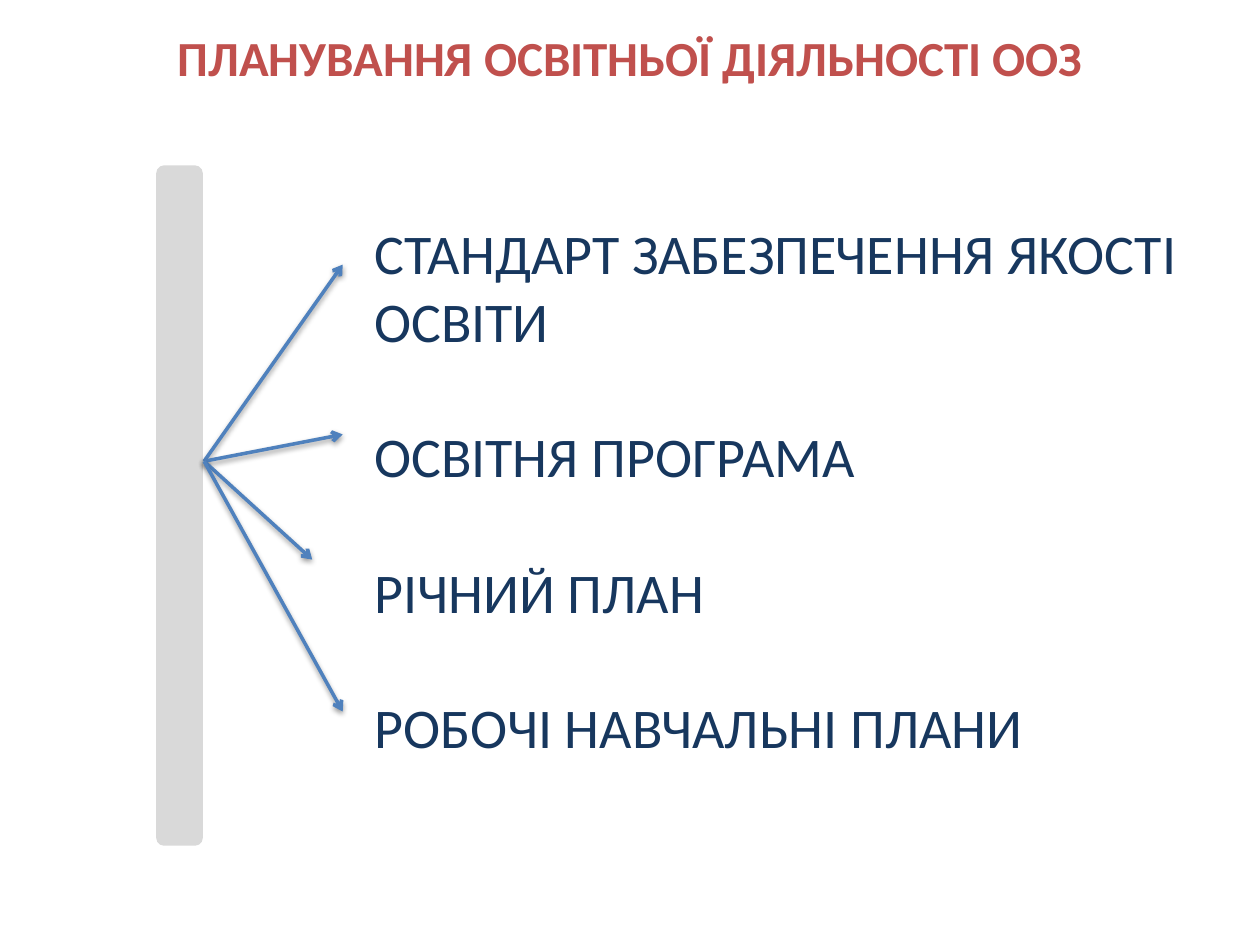
from dataclasses import dataclass

from lxml.etree import SubElement
from pptx import Presentation
from pptx.dml.color import RGBColor as RGB
from pptx.enum.shapes import MSO_CONNECTOR as Line, MSO_SHAPE as Shape
from pptx.enum.text import MSO_ANCHOR as Anchor, MSO_AUTO_SIZE as Fit, PP_ALIGN as Align
from pptx.oxml.ns import qn
from pptx.util import Inches, Pt


@dataclass(frozen=True)
class Theme:
    """Colours, font and sizes of the slide."""
    font: str = "Calibri"
    title: RGB = RGB(0xC0, 0x50, 0x4D)
    text: RGB = RGB(0x17, 0x37, 0x5E)
    bar: RGB = RGB(0xD9, 0xD9, 0xD9)
    arrow: RGB = RGB(0x4F, 0x81, 0xBD)
    title_size: int = 28
    text_size: int = 32
    gap: int = 39
    arrow_width: int = 2


THEME = Theme()
WIDTH, HEIGHT = Inches(10), Inches(7.5)
TITLE = "ПЛАНУВАННЯ ОСВІТНЬОЇ ДІЯЛЬНОСТІ ООЗ"
PLANS = [
    "СТАНДАРТ ЗАБЕЗПЕЧЕННЯ ЯКОСТІ ОСВІТИ",
    "ОСВІТНЯ ПРОГРАМА",
    "РІЧНИЙ ПЛАН",
    "РОБОЧІ НАВЧАЛЬНІ ПЛАНИ",
]
ARROW_TIPS = [(1, 0), (1, 0.38), (0.78, 0.66), (1, 1)]


def box(left, top, width, height):
    """Turn shares of the slide into a left, top, width, height box."""
    return (int(left * WIDTH), int(top * HEIGHT),
            int(width * WIDTH), int(height * HEIGHT))


def place(sp, area):
    """Move a shape to its box."""
    sp.left, sp.top, sp.width, sp.height = area


def format_text(p, size, color, bold=False):
    """Format every run of a paragraph."""
    for r in p.runs:
        r.font.name, r.font.size, r.font.bold = THEME.font, Pt(size), bold
        r.font.color.rgb = color


def add_title(sp, area):
    """Fill the title placeholder."""
    place(sp, area)
    tf = sp.text_frame
    tf.text = TITLE
    tf.auto_size = Fit.NONE
    tf.vertical_anchor = Anchor.MIDDLE
    p = tf.paragraphs[0]
    p.alignment = Align.CENTER
    format_text(p, THEME.title_size, THEME.title, True)


def add_plans(sp, area):
    """Fill the body placeholder with the spaced list of plans."""
    place(sp, area)
    tf = sp.text_frame
    tf.text = "\n".join(PLANS)
    tf.auto_size = Fit.NONE
    tf.vertical_anchor = Anchor.TOP
    for i, p in enumerate(tf.paragraphs):
        pr = p._p.get_or_add_pPr()
        pr.set("marL", "0")
        pr.set("indent", "0")
        SubElement(pr, qn("a:buNone"))
        p.alignment = Align.JUSTIFY if i else Align.LEFT
        p.space_before = Pt(THEME.gap if i else 0)
        format_text(p, THEME.text_size, THEME.text)


def add_bar(slide, area):
    """Draw the upright bar the arrows start from."""
    sp = slide.shapes.add_shape(Shape.ROUNDED_RECTANGLE, *area)
    sp.adjustments[0] = 0.17
    sp.shadow.inherit = False
    sp.fill.solid()
    sp.fill.fore_color.rgb = THEME.bar
    sp.line.fill.background()


def add_shadow(sp):
    """Give a connector a soft shadow below it."""
    effects = SubElement(sp._element.spPr, qn("a:effectLst"))
    shadow = SubElement(effects, qn("a:outerShdw"), blurRad="40000",
                        dist="20000", dir="5400000", rotWithShape="0")
    color = SubElement(shadow, qn("a:srgbClr"), val="000000")
    SubElement(color, qn("a:alpha"), val="38000")


def add_arrows(slide, area, origin):
    """Fan arrows out from a point on the left side of the box."""
    left, top, width, height = area
    for x, y in ARROW_TIPS:
        sp = slide.shapes.add_connector(
            Line.STRAIGHT, left, top + int(origin * height),
            left + int(x * width), top + int(y * height))
        sp.line.color.rgb = THEME.arrow
        sp.line.width = Pt(THEME.arrow_width)
        SubElement(sp.line._get_or_add_ln(), qn("a:tailEnd"), type="arrow")
        add_shadow(sp)


def build_slide(prs):
    """Add the planning slide."""
    slide = prs.slides.add_slide(prs.slide_layouts[1])
    title, body = slide.placeholders
    add_title(title, box(0.02, 0.02, 0.96, 0.08))
    add_plans(body, box(0.287, 0.225, 0.689, 0.74))
    add_bar(slide, box(0.124, 0.175, 0.037, 0.72))
    add_arrows(slide, box(0.162, 0.28, 0.11, 0.473), 0.44)


def main():
    """Build and save the presentation."""
    prs = Presentation()
    prs.slide_width, prs.slide_height = WIDTH, HEIGHT
    build_slide(prs)
    prs.save("out.pptx")


if __name__ == "__main__":
    main()
